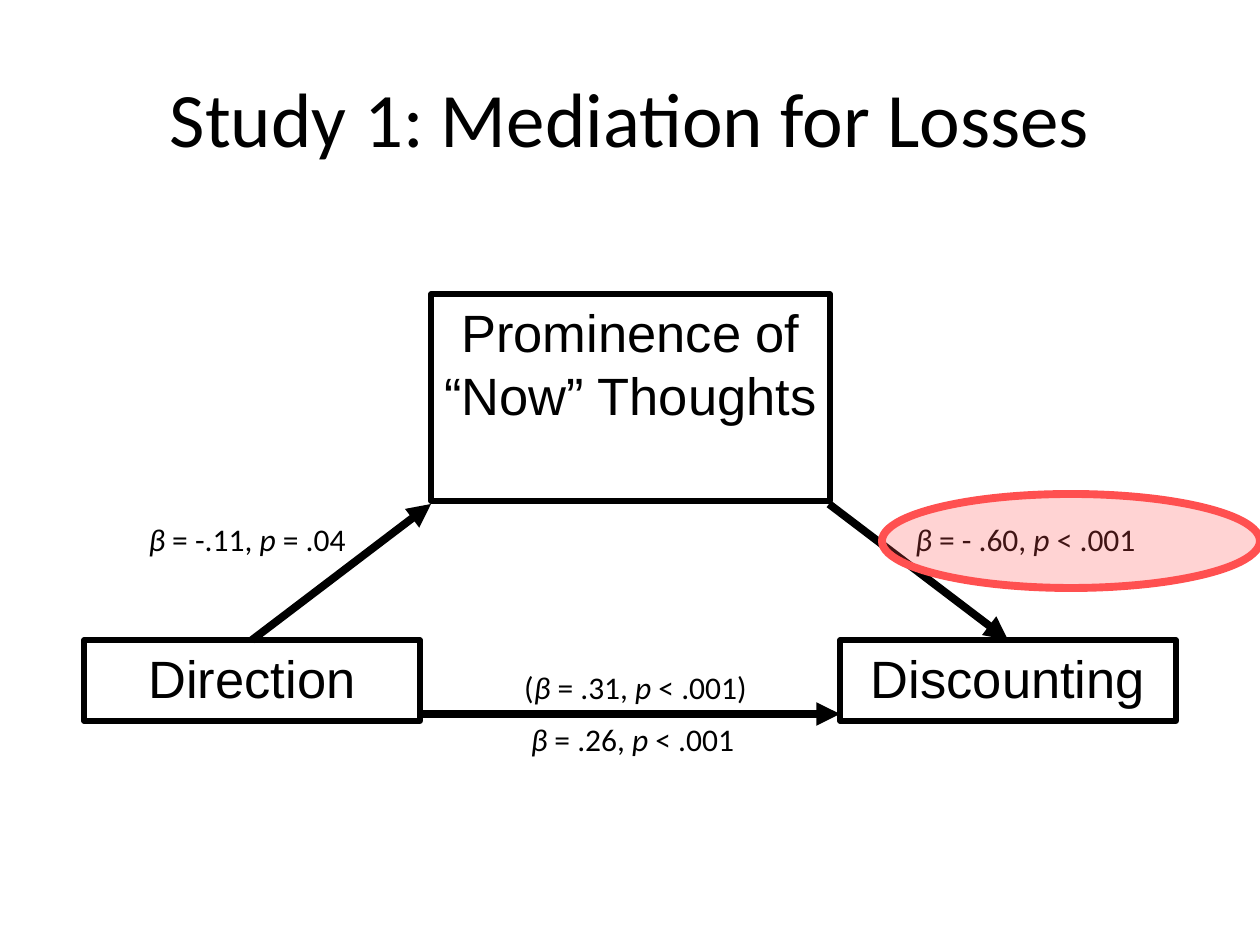
from dataclasses import dataclass

from lxml.etree import SubElement
from pptx import Presentation
from pptx.dml.color import RGBColor
from pptx.enum.shapes import MSO_CONNECTOR, MSO_SHAPE
from pptx.enum.text import MSO_ANCHOR, PP_ALIGN
from pptx.oxml.ns import qn
from pptx.util import Emu, Pt

INK = "000000"
RED = "FF5050"


@dataclass
class Node:
    """A boxed variable of the mediation model."""
    text: str
    x: int
    y: int
    w: int
    h: int


@dataclass
class Arrow:
    """A path between two variables."""
    x1: int
    y1: int
    x2: int
    y2: int


@dataclass
class Label:
    """A path coefficient, split at its italic symbols."""
    bits: tuple[str, ...]
    x: int
    y: int
    align: PP_ALIGN


NODES = [
    Node("Direction", 84, 640, 336, 81),
    Node("Prominence of “Now” Thoughts", 431, 294, 399, 207),
    Node("Discounting", 840, 640, 336, 81),
]
ARROWS = [
    Arrow(252, 640, 431, 504),
    Arrow(420, 714, 840, 714),
    Arrow(829, 504, 1008, 640),
]
LABELS = [
    Label(("β", " = -.11, ", "p", " = .04"), 53, 514, PP_ALIGN.RIGHT),
    Label(("β", " = - .60, ", "p", " < .001"), 903, 514, PP_ALIGN.LEFT),
    Label(("(", "β", " = .31, ", "p", " < .001)"), 483, 662, PP_ALIGN.CENTER),
    Label(("β", " = .26, ", "p", " < .001"), 480, 714, PP_ALIGN.CENTER),
]


def px(num: int) -> Emu:
    """Turn pixels into EMU."""
    return Emu(round(num * 914400 / 126))


def tint(code: str) -> RGBColor:
    """Turn a hex string into a colour."""
    return RGBColor.from_string(code)


def style(run, size: int, face: str) -> None:
    """Set size, face and colour of a run."""
    run.font.size = Pt(size)
    run.font.name = face
    run.font.color.rgb = tint(INK)


def edge(line, code: str, width: float) -> None:
    """Set colour and width of a line."""
    line.color.rgb = tint(code)
    line.width = Pt(width)


def add_title(slide, text: str) -> None:
    """Place and fill the title."""
    title = slide.shapes.title
    title.left, title.top, title.width, title.height = map(px, (63, 38, 1134, 157))
    frame = title.text_frame
    frame.text = text
    frame.vertical_anchor = MSO_ANCHOR.MIDDLE
    para = frame.paragraphs[0]
    para.alignment = PP_ALIGN.CENTER
    style(para.runs[0], 44, "Calibri")


def add_node(slide, node: Node) -> None:
    """Draw a boxed variable."""
    box = slide.shapes.add_shape(
        MSO_SHAPE.RECTANGLE, px(node.x), px(node.y), px(node.w), px(node.h))
    box.shadow.inherit = False
    box.fill.background()
    edge(box.line, INK, 3)
    frame = box.text_frame
    frame.text = node.text
    frame.word_wrap = True
    frame.vertical_anchor = MSO_ANCHOR.TOP
    para = frame.paragraphs[0]
    para.alignment = PP_ALIGN.CENTER
    style(para.runs[0], 30, "Arial")


def add_arrow(slide, arrow: Arrow) -> None:
    """Draw a path with a triangle head."""
    path = slide.shapes.add_connector(
        MSO_CONNECTOR.STRAIGHT,
        px(arrow.x1), px(arrow.y1), px(arrow.x2), px(arrow.y2))
    edge(path.line, INK, 4.5)
    props = path.element.spPr
    SubElement(props.find(qn("a:ln")), qn("a:tailEnd"), type="triangle")
    SubElement(props, qn("a:effectLst"))


def add_label(slide, label: Label) -> None:
    """Write a path coefficient."""
    box = slide.shapes.add_textbox(px(label.x), px(label.y), px(305), px(50))
    frame = box.text_frame
    frame.word_wrap = True
    para = frame.paragraphs[0]
    para.alignment = label.align
    for bit in label.bits:
        run = para.add_run()
        run.text = bit
        style(run, 18, "Calibri")
        run.font.italic = bit in ("β", "p")


def add_mark(slide) -> None:
    """Ring the key coefficient with a clear red oval."""
    oval = slide.shapes.add_shape(
        MSO_SHAPE.OVAL, px(882), px(494), px(378), px(94))
    oval.shadow.inherit = False
    oval.fill.solid()
    oval.fill.fore_color.rgb = tint(RED)
    fill = oval.element.spPr.find(qn("a:solidFill"))
    SubElement(fill[0], qn("a:alpha"), val="25000")
    edge(oval.line, RED, 4.5)


def main() -> None:
    """Build the slide."""
    deck = Presentation()
    deck.slide_width, deck.slide_height = px(1260), px(945)
    slide = deck.slides.add_slide(deck.slide_layouts[5])
    add_title(slide, "Study 1: Mediation for Losses")
    for node in NODES:
        add_node(slide, node)
    for arrow in ARROWS:
        add_arrow(slide, arrow)
    for label in LABELS:
        add_label(slide, label)
    add_mark(slide)
    deck.save("out.pptx")


if __name__ == "__main__":
    main()
